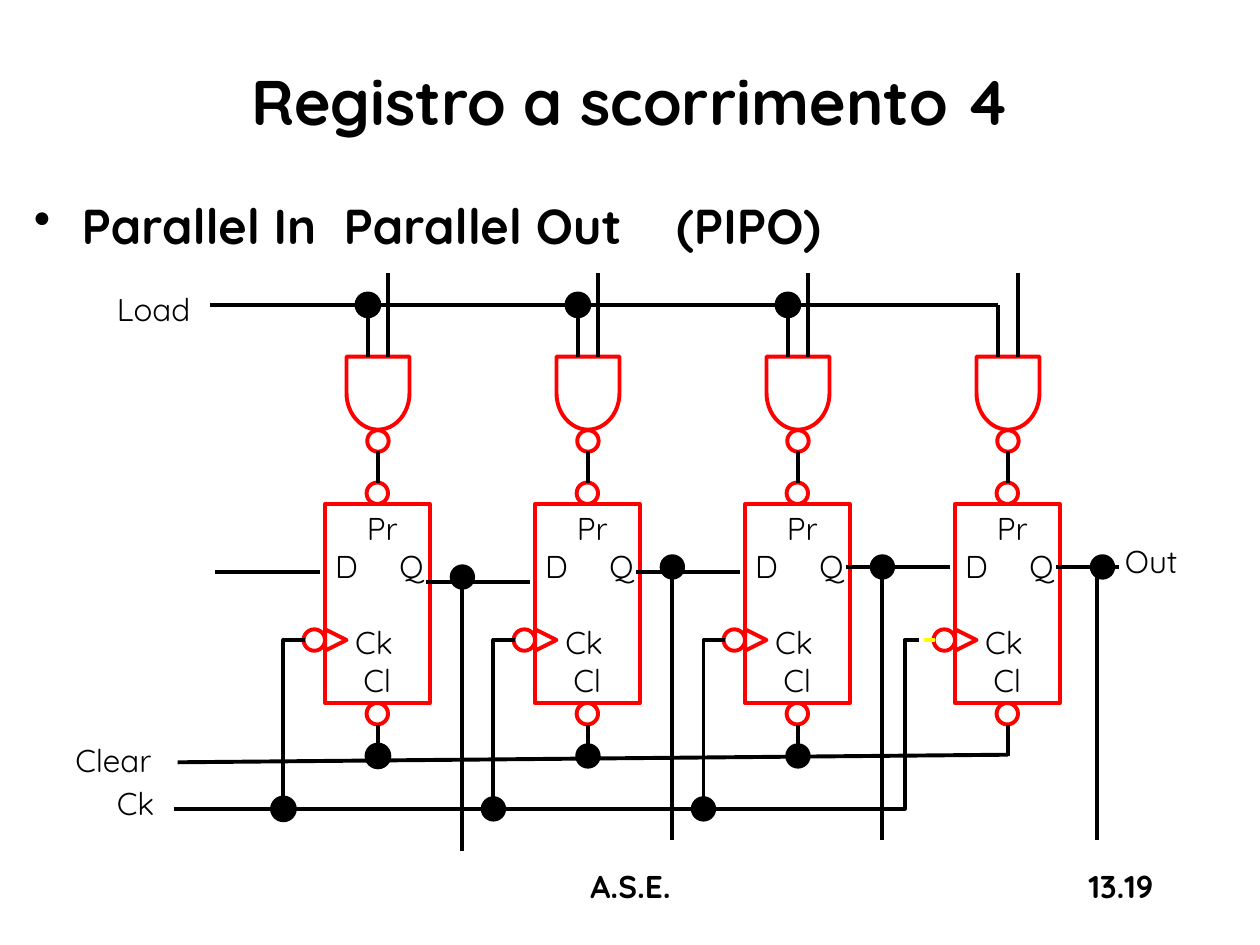
from lxml import etree
from pptx import Presentation
from pptx import util as u
from pptx.dml.color import RGBColor
from pptx.enum import shapes, text
from pptx.oxml.ns import qn

Inches = u.Inches
FONT = "Quicksand"
BLACK, RED, YELLOW = "000000", "FF0000", "FFFF00"
KIND = shapes.MSO_SHAPE
ALIGN = text.PP_ALIGN
STAGES = 4
PITCH = 5 / 3            # distance between neighbouring stages
STAGE_LEFT = 2.58        # left side of the first flip-flop
BUBBLE = 0.17            # diameter of bubbles and junction dots
LOAD_Y, CLEAR_Y, CLOCK_Y = 2.42, 6, 6.42


def color(value):
    return RGBColor.from_string(value)


def add_run(paragraph, words, size=18, bold=False):
    run = paragraph.add_run()
    run.text = words
    run.font.name, run.font.size, run.font.bold = FONT, u.Pt(size), bold
    run.font.color.rgb = color(BLACK)


def add_label(slide, words, left, top, width, height, align=ALIGN.LEFT,
              size=18, bold=False, wrap=True):
    box = slide.shapes.add_textbox(*map(Inches, (left, top, width, height)))
    box.text_frame.word_wrap = wrap
    paragraph = box.text_frame.paragraphs[0]
    paragraph.alignment = align
    add_run(paragraph, words, size, bold)
    return paragraph


def style_outline(shape, line=RED, fill=None, weight=2.25):
    shape.shadow.inherit = False
    shape.line.color.rgb = color(line)
    shape.line.width = u.Pt(weight)
    if fill:
        shape.fill.solid()
        shape.fill.fore_color.rgb = color(fill)
    else:
        shape.fill.background()


def add_outline(slide, kind, left, top, width, height, rotation=0):
    shape = slide.shapes.add_shape(kind, *map(Inches, (left, top, width, height)))
    shape.rotation = rotation
    style_outline(shape)
    return shape


def add_bubble(slide, x, y):
    """Inverting bubble centred on a point."""
    return add_outline(slide, KIND.OVAL, x - BUBBLE / 2, y - BUBBLE / 2, BUBBLE, BUBBLE)


def add_dot(slide, x, y, weight=2.25):
    """Junction dot centred on a point."""
    style_outline(add_bubble(slide, x, y), BLACK, BLACK, weight)


def add_wire(slide, x1, y1, x2, y2, line=BLACK):
    wire = slide.shapes.add_connector(
        shapes.MSO_CONNECTOR.STRAIGHT, *map(Inches, (x1, y1, x2, y2)))
    wire.line.color.rgb = color(line)
    wire.line.width = u.Pt(2.25)
    etree.SubElement(wire._element.spPr, qn("a:effectLst"))


def add_bent_wire(slide, points):
    corners = [(Inches(x), Inches(y)) for x, y in points]
    builder = slide.shapes.build_freeform(*corners[0])
    builder.add_line_segments(corners[1:], close=False)
    style_outline(builder.convert_to_shape(), BLACK)


def add_flip_flop(slide, left, top, width=0.83, height=1.58):
    middle, clock_y = left + width / 2, top + 1.08
    body = add_outline(slide, KIND.RECTANGLE, left, top, width, height)

    # Pin names, with a tab between D and Q
    frame = body.text_frame
    frame.word_wrap = True
    frame.vertical_anchor = text.MSO_ANCHOR.MIDDLE
    frame.margin_left = Inches(0.08)
    frame.margin_right = frame.margin_top = frame.margin_bottom = 0
    pins = [("Pr", ALIGN.CENTER), ("D\tQ", ALIGN.LEFT),
            ("Ck", ALIGN.LEFT), ("Cl", ALIGN.CENTER)]
    for index, (name, align) in enumerate(pins):
        paragraph = frame.add_paragraph() if index else frame.paragraphs[0]
        paragraph.alignment = align
        properties = paragraph._p.get_or_add_pPr()
        if name == "Ck":
            paragraph.space_before = u.Pt(22)
            properties.set("marL", str(Inches(0.16)))
        elif name == "Cl":
            properties.set("marR", str(Inches(0.08)))
        elif "\t" in name:
            stops = etree.SubElement(properties, qn("a:tabLst"))
            etree.SubElement(stops, qn("a:tab"), pos=str(Inches(0.51)), algn="l")
        add_run(paragraph, name)

    # Preset, clear and clock inputs
    add_bubble(slide, middle, top - BUBBLE / 2)
    add_bubble(slide, middle, top + height + BUBBLE / 2)
    add_outline(slide, KIND.ISOSCELES_TRIANGLE, left, clock_y - BUBBLE / 2,
                BUBBLE, BUBBLE, 90)
    add_bubble(slide, left - BUBBLE / 2, clock_y)


def add_load_gate(slide, middle, top):
    """NAND gate with its load input, data input and output."""
    add_outline(slide, KIND.FLOWCHART_DELAY, middle - 0.29, top + 0.04, 0.58, 0.5, 90)
    add_bubble(slide, middle, top + 0.67)
    add_wire(slide, middle, top + 0.75, middle, top + 1)
    add_wire(slide, middle + 0.08, top, middle + 0.08, top - 0.66)
    add_wire(slide, middle - 0.08, top, middle - 0.08, LOAD_Y)


def add_data_wires(slide, left, top):
    """Wires between the stages, and the parallel outputs below them."""
    add_wire(slide, left - 0.87, top + 0.54, left - 0.04, top + 0.54)
    wire_heights = [0.62, 0.54, 0.5, 0.5]
    for stage, height in enumerate(wire_heights):
        start = left + 0.8 + stage * PITCH
        last = stage == STAGES - 1
        drop = 0.08 if stage == 0 else 0
        tap_x, tap_y = start + 0.29, top + 0.5 + drop
        add_wire(slide, start, top + height, start + (0.5 if last else 0.83), top + height)
        wire_x = tap_x + (0.04 if last else 0)
        add_wire(slide, wire_x, tap_y, wire_x, tap_y + 2.17)
        add_dot(slide, tap_x + (0.08 if last else 0), tap_y)


def add_control_lines(slide, left):
    """Load, clear and clock lines, which serve all stages."""
    middle, clock_y = left + 0.42, 5.08
    last = (STAGES - 1) * PITCH
    add_wire(slide, 1.67, LOAD_Y, middle - 0.08 + last, LOAD_Y)
    add_wire(slide, 1.41, CLEAR_Y + 0.05, middle + last, CLEAR_Y - 0.01)
    add_bent_wire(slide, [(1.38, CLOCK_Y), (7.18, CLOCK_Y), (7.18, clock_y), (7.29, clock_y)])
    add_wire(slide, 7.33, clock_y, 7.42, clock_y, YELLOW)
    for stage in range(STAGES):
        shift = stage * PITCH
        add_wire(slide, middle + shift, 5.75, middle + shift, CLEAR_Y)
        if stage == STAGES - 1:
            continue
        weight = 2.25 if stage else 3
        clock_x = left - 0.33 + shift
        add_dot(slide, middle - 0.08 + shift, LOAD_Y, 3)
        add_dot(slide, middle + shift, CLEAR_Y, weight)
        add_bent_wire(slide, [(clock_x + 0.17, clock_y), (clock_x, clock_y), (clock_x, CLOCK_Y)])
        add_dot(slide, clock_x, CLOCK_Y, weight)


def add_heading(slide, left, top, width):
    # Title
    title = slide.shapes.title
    title.left, title.top, title.width, title.height = map(
        Inches, (left, top, width, 1.25))
    title.text_frame.vertical_anchor = text.MSO_ANCHOR.MIDDLE
    paragraph = title.text_frame.paragraphs[0]
    paragraph.alignment = ALIGN.CENTER
    add_run(paragraph, "Registro a scorrimento 4", 36, True)

    # Bulleted subject
    paragraph = add_label(slide, "Parallel In  Parallel Out    (PIPO)",
                          left, top + 1.33, width, 0.6, size=28, bold=True)
    paragraph.space_before = u.Pt(5.6)
    properties = paragraph._p.get_or_add_pPr()
    properties.set("marL", str(Inches(0.38)))
    properties.set("indent", str(Inches(-0.38)))
    etree.SubElement(properties, qn("a:buChar"), char="•")


def add_register(slide, left, top):
    for stage in range(STAGES):
        stage_left = left + stage * PITCH
        add_flip_flop(slide, stage_left, top)
        add_load_gate(slide, stage_left + 0.42, top - 1.17)
    add_control_lines(slide, left)
    add_data_wires(slide, left, top)
    for name, x, y, width in [("Load", 0.83, 2.25, 0.81), ("Clear", 0.5, 5.83, 0.86),
                              ("Ck", 0.83, 6.17, 0.53), ("Out", 8.83, 4.25, 0.64)]:
        add_label(slide, name, x, y, width, 0.4, wrap=False)


def add_footer(slide, top):
    add_label(slide, "A.S.E.", 3.42, top, 3.17, 0.5, ALIGN.CENTER, bold=True)
    add_label(slide, "13.19", 7.17, top, 2.08, 0.5, ALIGN.RIGHT, bold=True)


def main():
    presentation = Presentation()
    presentation.slide_width, presentation.slide_height = Inches(10), Inches(7.5)
    slide = presentation.slides.add_slide(presentation.slide_layouts[5])
    add_heading(slide, 0.17, 0.17, 9.67)
    add_register(slide, STAGE_LEFT, 4)
    add_footer(slide, 6.83)
    presentation.save("out.pptx")


if __name__ == "__main__":
    main()
